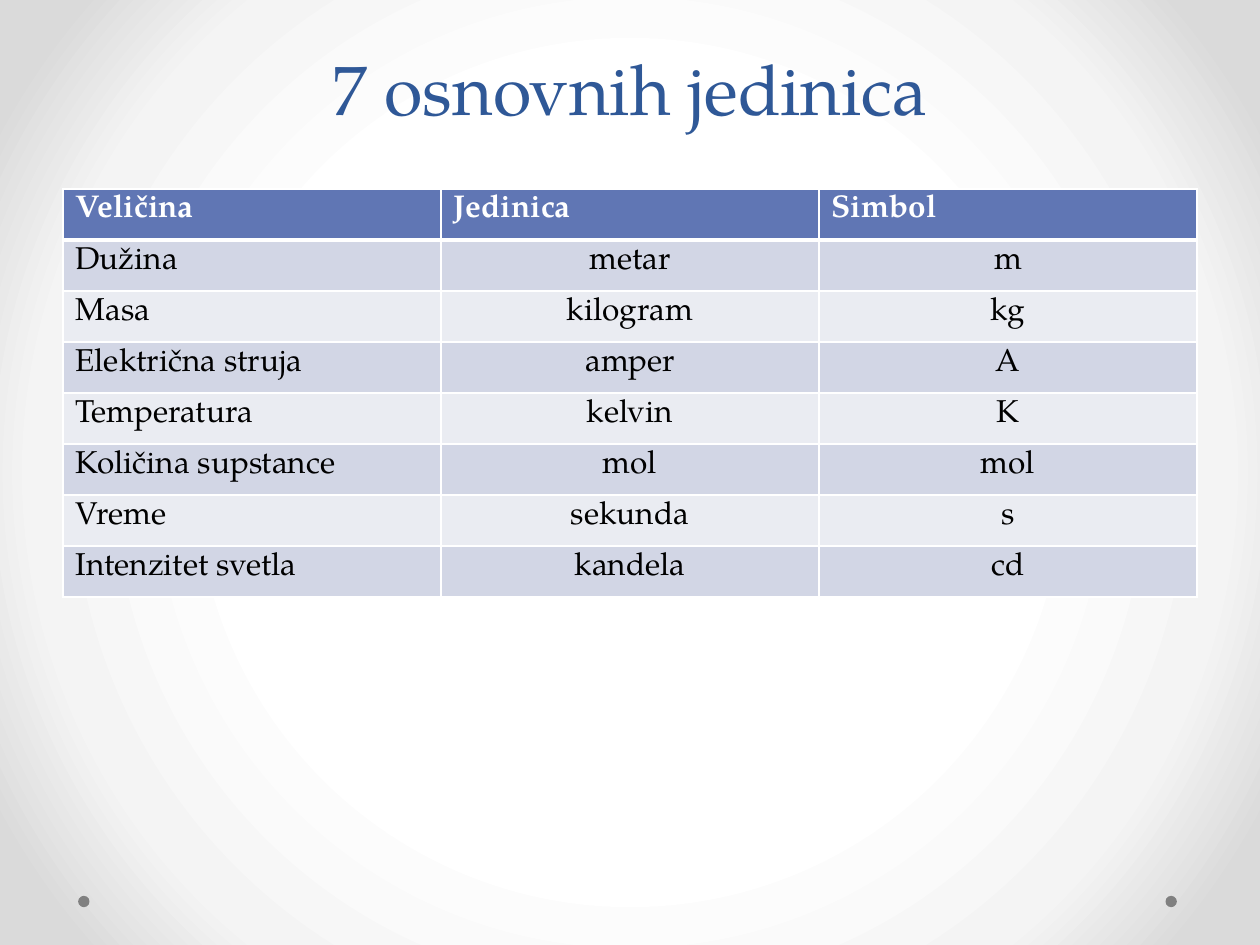
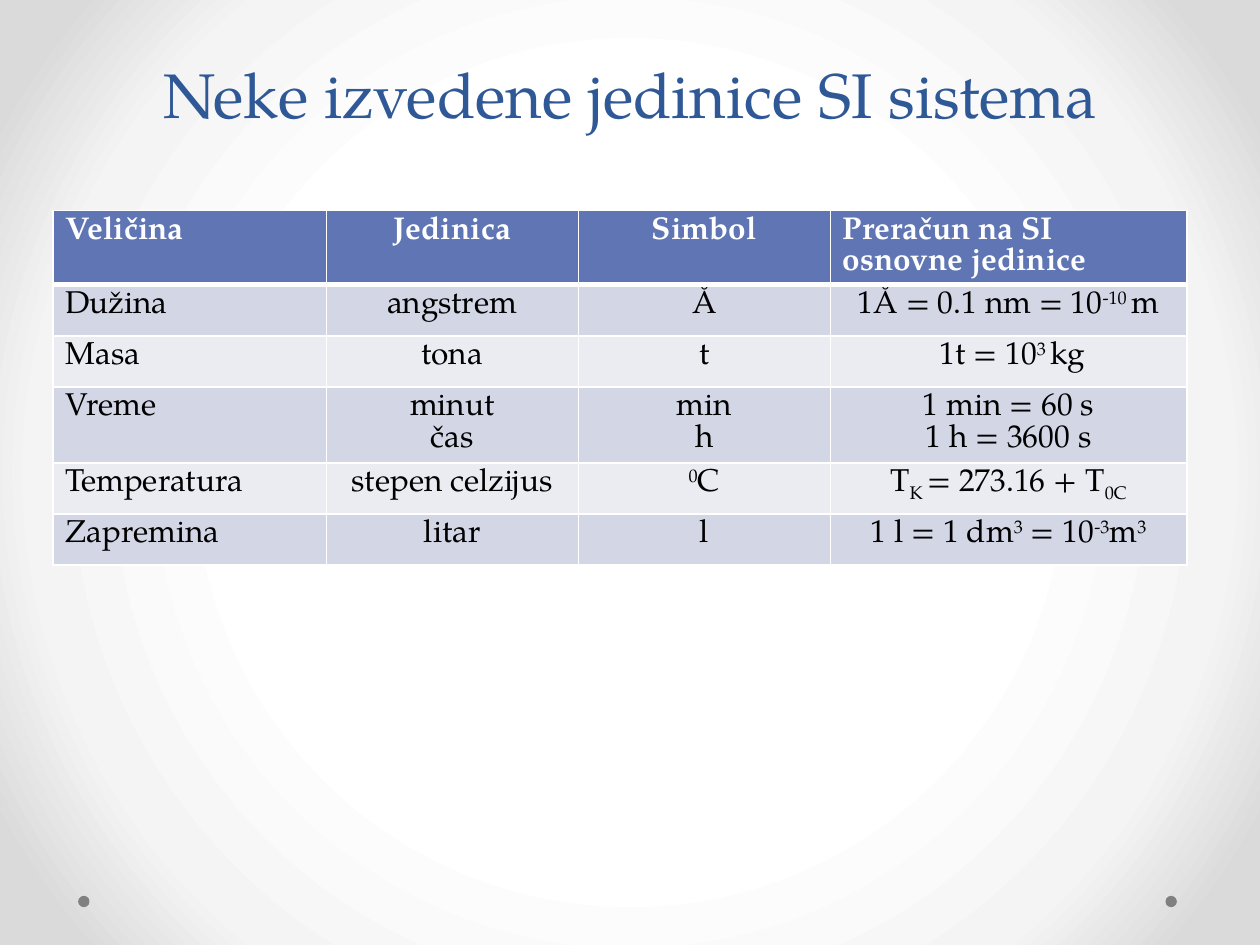
"""Build two slides with tables of SI units."""
from pptx import Presentation
from pptx.dml.color import RGBColor
from pptx.enum.shapes import MSO_SHAPE
from pptx.enum.text import MSO_ANCHOR, MSO_AUTO_SIZE, PP_ALIGN
from pptx.oxml import parse_xml
from pptx.oxml.ns import nsdecls, qn
from pptx.util import Inches, Pt

LEFT, CENTER = PP_ALIGN.LEFT, PP_ALIGN.CENTER
BOTTOM = MSO_ANCHOR.BOTTOM
NO_AUTOFIT = MSO_AUTO_SIZE.NONE
OVAL = MSO_SHAPE.OVAL

FONT = "TeX Gyre Pagella"
TITLE_BLUE, HEADER_BLUE = "2F5897", "6076B4"
BANDS = ("D2D6E5", "EAECF2")
WHITE, BLACK, DOT_GREY = "FFFFFF", "000000", "808080"
BACKDROP_STOPS = ((50, WHITE), (76, "F4F4F4"), (92, "DADADA"))

TITLE_ONLY = 5
ROW_HEIGHT = 3.24 / 8
DOT_SIZE, DOT_TOP, DOT_LEFTS = 0.09, 7.11, (0.62, 9.25)
SUPER, SUB = 30, -25

BASE_UNITS = [
    ["Veličina", "Jedinica", "Simbol"],
    ["Dužina", "metar", "m"],
    ["Masa", "kilogram", "kg"],
    ["Električna struja", "amper", "A"],
    ["Temperatura", "kelvin", "K"],
    ["Količina supstance", "mol", "mol"],
    ["Vreme", "sekunda", "s"],
    ["Intenzitet svetla", "kandela", "cd"],
]
DERIVED_UNITS = [
    ["Veličina", "Jedinica", "Simbol", "Preračun na SI osnovne jedinice"],
    ["Dužina", "angstrem", "Å", [("1Å = 0.1 nm = 10", 0), ("-10 ", SUPER), ("m", 0)]],
    ["Masa", "tona", "t", [(" 1t = 10", 0), ("3 ", SUPER), ("kg", 0)]],
    ["Vreme", "minut\nčas", "min\nh", "1 min = 60 s\n1 h = 3600 s"],
    ["Temperatura", "stepen celzijus", [("0", SUPER), ("C", 0)],
     [("T", 0), ("K ", SUB), ("= 273.16 + T", 0), ("0C", SUB)]],
    ["Zapremina", "litar", "l",
     [("1 l = 1 dm", 0), ("3", SUPER), (" = 10", 0), ("-3", SUPER), ("m", 0), ("3", SUPER)]],
]


def color(hex_value):
    """Turn a hex string into a colour."""
    return RGBColor.from_string(hex_value)


def add_span(para, text, size, hex_value, bold=False, baseline=0):
    """Add one formatted run, raised or lowered by a percentage."""
    span = para.add_run()
    span.text = text
    font = span.font
    font.name, font.size, font.bold = FONT, Pt(size), bold
    font.color.rgb = color(hex_value)
    if baseline:
        span._r.get_or_add_rPr().set("baseline", str(baseline * 1000))


def set_backdrop(master):
    """Give the slide master a circular gradient."""
    stops = "".join(
        f'<a:gs pos="{position * 1000}"><a:srgbClr val="{hex_value}"/></a:gs>'
        for position, hex_value in BACKDROP_STOPS)
    gradient = parse_xml(
        f'<a:gradFill {nsdecls("a")} rotWithShape="1"><a:gsLst>{stops}</a:gsLst>'
        '<a:path path="circle"><a:fillToRect l="50000" t="50000" r="50000" b="50000"/>'
        '</a:path></a:gradFill>')
    master.background.fill.solid()
    properties = master._element.find(".//" + qn("p:bgPr"))
    properties.replace(properties[0], gradient)


def add_dot(page, left):
    """Draw one small grey dot at the foot of the page."""
    dot = page.shapes.add_shape(
        OVAL, Inches(left), Inches(DOT_TOP), Inches(DOT_SIZE), Inches(DOT_SIZE))
    dot.shadow.inherit = False
    dot.fill.solid()
    dot.fill.fore_color.rgb = color(DOT_GREY)
    dot.line.fill.background()


def set_title(page, text, top, height, size):
    """Place and format the title placeholder."""
    title = page.shapes.title
    title.left, title.top = Inches(0.5), Inches(top)
    title.width, title.height = Inches(9), Inches(height)
    frame = title.text_frame
    frame.word_wrap = True
    frame.auto_size = NO_AUTOFIT
    frame.vertical_anchor = BOTTOM
    para = frame.paragraphs[0]
    para.alignment = CENTER
    para.line_spacing = Pt(58)
    add_span(para, text, size, TITLE_BLUE)


def add_page(deck, title, top, height, size):
    """Add a page with its title and foot dots."""
    page = deck.slides.add_slide(deck.slide_layouts[TITLE_ONLY])
    for left in DOT_LEFTS:
        add_dot(page, left)
    set_title(page, title, top, height, size)
    return page


def set_borders(cell, top, bottom):
    """Draw white borders, with top and bottom widths in points."""
    properties = cell._tc.get_or_add_tcPr()
    for side, width in (("L", 1), ("R", 1), ("T", top), ("B", bottom)):
        properties.append(parse_xml(
            f'<a:ln{side} {nsdecls("a")} w="{Pt(width)}"><a:solidFill>'
            f'<a:srgbClr val="{WHITE}"/></a:solidFill></a:ln{side}>'))


def fill_cell(cell, content, row_index, alignment):
    """Write and colour a cell by the row it stands in."""
    header = row_index == 0
    set_borders(cell, 3 if row_index == 1 else 1, 3 if header else 1)
    cell.fill.solid()
    cell.fill.fore_color.rgb = color(HEADER_BLUE if header else BANDS[(row_index - 1) % 2])
    lines = [content]
    if isinstance(content, str):
        lines = [[(line, 0)] for line in content.split("\n")]
    frame = cell.text_frame
    for index, spans in enumerate(lines):
        para = frame.add_paragraph() if index else frame.paragraphs[0]
        para.alignment = alignment
        for text, baseline in spans:
            add_span(para, text, 18, WHITE if header else BLACK, header, baseline)


def add_unit_table(page, rows, left, top, widths, header_height, header_alignments):
    """Add a banded table with a left-aligned first column."""
    heights = [header_height] + [ROW_HEIGHT] * (len(rows) - 1)
    table = page.shapes.add_table(
        len(rows), len(widths), Inches(left), Inches(top),
        Inches(sum(widths)), Inches(sum(heights))).table
    for column, width in zip(table.columns, widths):
        column.width = Inches(width)
    for row_index, (row, height) in enumerate(zip(rows, heights)):
        table.rows[row_index].height = Inches(height)
        alignments = [LEFT] + [CENTER] * (len(row) - 1) if row_index else header_alignments
        for column_index, (content, alignment) in enumerate(zip(row, alignments)):
            fill_cell(table.cell(row_index, column_index), content, row_index, alignment)


def main():
    """Build and save the deck."""
    deck = Presentation()
    deck.slide_width, deck.slide_height = Inches(10), Inches(7.5)
    set_backdrop(deck.slide_master)

    page = add_page(deck, "7 osnovnih jedinica", 0.25, 0.83, 40)
    add_unit_table(page, BASE_UNITS, 0.5, 1.5, [3, 3, 3], ROW_HEIGHT, [LEFT] * 3)

    page = add_page(deck, "Neke izvedene jedinice SI sistema", 0.42, 0.67, 36)
    add_unit_table(page, DERIVED_UNITS, 0.42, 1.67, [2.17, 2, 2, 2.83], 0.5,
                   [LEFT, CENTER, CENTER, LEFT])

    deck.save("out.pptx")


if __name__ == "__main__":
    main()
